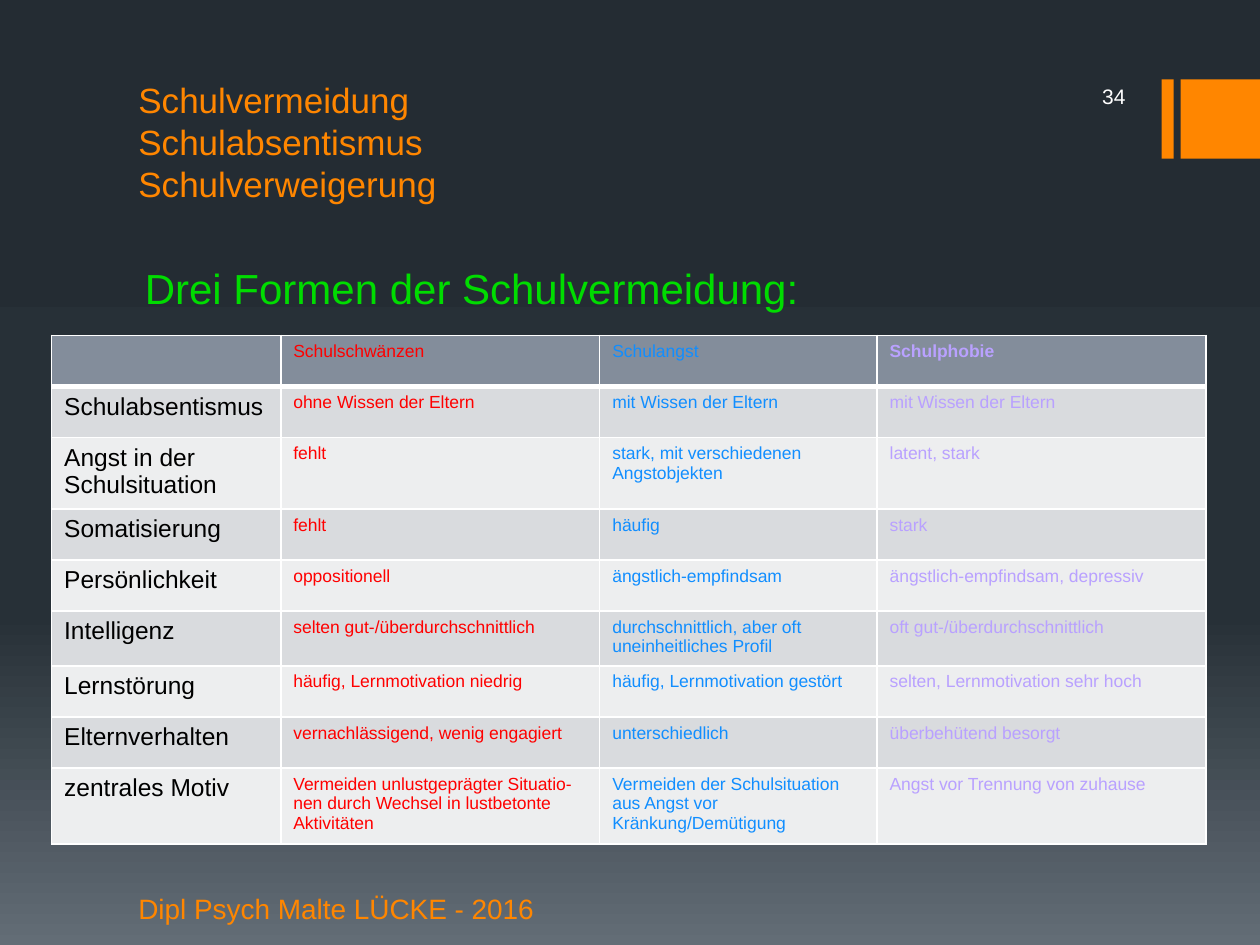
from copy import deepcopy

from lxml import etree
from pptx import Presentation
from pptx.dml.color import RGBColor
from pptx.enum.shapes import MSO_SHAPE
from pptx.enum.text import MSO_ANCHOR, PP_ALIGN
from pptx.oxml.ns import qn
from pptx.util import Cm, Pt

RECT = MSO_SHAPE.RECTANGLE
TOP, MIDDLE, BOTTOM = MSO_ANCHOR.TOP, MSO_ANCHOR.MIDDLE, MSO_ANCHOR.BOTTOM
LEFT, RIGHT = PP_ALIGN.LEFT, PP_ALIGN.RIGHT

FONT = "Arial"
ORANGE = RGBColor(0xFF, 0x86, 0x00)
GREEN = RGBColor(0x00, 0xDC, 0x00)
RED = RGBColor(0xFF, 0x00, 0x00)
BLUE = RGBColor(0x11, 0x8E, 0xFF)
LILAC = RGBColor(0xB9, 0xA1, 0xFF)
BLACK = RGBColor(0x00, 0x00, 0x00)
WHITE = RGBColor(0xFF, 0xFF, 0xFF)
HEADER_FILL = RGBColor(0x83, 0x8D, 0x9B)
BAND_FILLS = (RGBColor(0xED, 0xEE, 0xEF), RGBColor(0xD9, 0xDB, 0xDE))
BACKGROUND = [
    (0, RGBColor(0x24, 0x2C, 0x33)),
    (0.65, RGBColor(0x27, 0x30, 0x37)),
    (1, RGBColor(0x63, 0x6D, 0x76)),
]

# Content
TITLE = "Schulvermeidung\vSchulabsentismus\vSchulverweigerung"
SUBTITLE = "Drei Formen der Schulvermeidung:"
FOOTER = "Dipl Psych Malte LÜCKE - 2016"
PAGE = "34"
ROWS = [
    ("", "Schulschwänzen", "Schulangst", "Schulphobie"),
    ("Schulabsentismus", "ohne Wissen der Eltern", "mit Wissen der Eltern",
     "mit Wissen der Eltern"),
    ("Angst in der Schulsituation", "fehlt",
     "stark, mit verschiedenen\nAngstobjekten", "latent, stark"),
    ("Somatisierung", "fehlt", "häufig", "stark"),
    ("Persönlichkeit", "oppositionell", "ängstlich-empfindsam",
     "ängstlich-empfindsam, depressiv"),
    ("Intelligenz", "selten gut-/überdurchschnittlich",
     "durchschnittlich, aber oft\nuneinheitliches Profil",
     "oft gut-/überdurchschnittlich"),
    ("Lernstörung", "häufig, Lernmotivation niedrig",
     "häufig, Lernmotivation gestört", "selten, Lernmotivation sehr hoch"),
    ("Elternverhalten", "vernachlässigend, wenig engagiert",
     "unterschiedlich", "überbehütend besorgt"),
    ("zentrales Motiv",
     "Vermeiden unlustgeprägter Situatio-nen durch Wechsel in lustbetonte Aktivitäten",
     "Vermeiden der Schulsituation aus Angst vor Kränkung/Demütigung",
     "Angst vor Trennung von zuhause"),
]
# Width in cm, text size, text colour
COLUMNS = [(4.62, 14, BLACK), (6.43, 10, RED), (5.59, 10, BLUE), (6.63, 10, LILAC)]
ROW_HEIGHT = Cm(1.03)


def style(tf, size, color, bold=False, align=LEFT):
    for p in tf.paragraphs:
        p.alignment = align
        p.font.name, p.font.size, p.font.bold = FONT, Pt(size), bold
        p.font.color.rgb = color


def add_text(s, box, text, size, color, anchor=TOP, align=LEFT):
    tf = s.shapes.add_textbox(*map(Cm, box)).text_frame
    tf.word_wrap = True
    tf.vertical_anchor = anchor
    tf.text = text
    style(tf, size, color, align=align)
    return tf


def set_borders(cell, widths):
    tcPr = cell._tc.get_or_add_tcPr()
    for i, (side, width) in enumerate(zip("LRTB", widths)):
        ln = etree.Element(qn(f"a:ln{side}"), w=str(Pt(width)))
        fill = etree.SubElement(ln, qn("a:solidFill"))
        etree.SubElement(fill, qn("a:srgbClr"), val=str(WHITE))
        tcPr.insert(i, ln)


prs = Presentation()
prs.slide_width, prs.slide_height = Cm(25.4), Cm(19.05)
s = prs.slides.add_slide(prs.slide_layouts[6])

# Background, top to bottom
fill = s.background.fill
fill.gradient()
fill.gradient_angle = 270
first = fill.gradient_stops[0]._gs
first.addnext(deepcopy(first))
for stop, (position, color) in zip(fill.gradient_stops, BACKGROUND):
    stop.position = position
    stop.color.rgb = color

# Orange bars at the right edge
for left, width in [(23.42, 0.24), (23.8, 1.6)]:
    bar = s.shapes.add_shape(RECT, Cm(left), Cm(1.6), Cm(width), Cm(1.6))
    bar.shadow.inherit = False
    bar.fill.solid()
    bar.fill.fore_color.rgb = ORANGE
    bar.line.fill.background()

# Texts
add_text(s, (2.54, 1.52, 12.47, 2.72), TITLE, 20, ORANGE, BOTTOM)
tf = add_text(s, (2.54, 5.16, 20.9, 1.4), SUBTITLE, 24, GREEN)
tf.margin_left = Cm(0.38)
tf = add_text(s, (2.54, 17.98, 8.86, 0.84), FOOTER, 16, ORANGE)
tf.margin_top = 0
add_text(s, (20.32, 1.52, 2.62, 0.84), PAGE, 12, WHITE, MIDDLE, RIGHT)

# Table
total_width = Cm(sum(width for width, _, _ in COLUMNS))
table = s.shapes.add_table(len(ROWS), len(COLUMNS), Cm(1.04), Cm(6.76),
                           total_width, ROW_HEIGHT * len(ROWS)).table
for column, (width, _, _) in zip(table.columns, COLUMNS):
    column.width = Cm(width)
for r, row in enumerate(ROWS):
    table.rows[r].height = ROW_HEIGHT
    for c, (text, (_, size, color)) in enumerate(zip(row, COLUMNS)):
        cell = table.cell(r, c)
        cell.text = text
        style(cell.text_frame, size, color, bold=text == "Schulphobie")
        cell.fill.solid()
        cell.fill.fore_color.rgb = BAND_FILLS[r % 2] if r else HEADER_FILL
        set_borders(cell, (1, 1, 3 if r == 1 else 1, 3 if r == 0 else 1))

prs.save("out.pptx")
